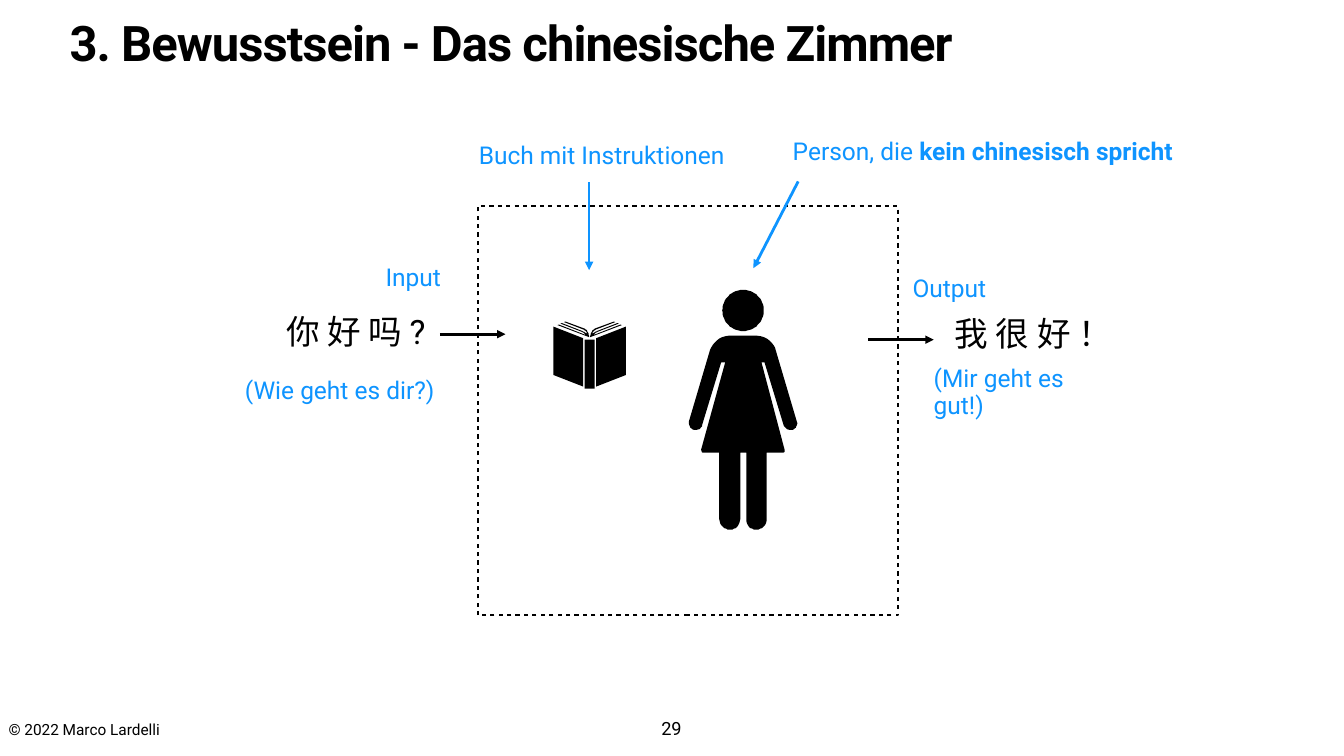
from dataclasses import dataclass
from math import cos, pi, sin

from lxml import etree
from pptx import Presentation
from pptx import util as u
from pptx.dml.color import RGBColor
from pptx.enum import shapes, text
from pptx.oxml import ns

BLACK = RGBColor(0x00, 0x00, 0x00)
BLUE = RGBColor(0x0E, 0x94, 0xFF)
FONT = "Roboto"
INSET = u.Inches(0.06)


@dataclass
class Box:
    """A region in EMU; areas in it are given in percent of its size."""
    left: int
    top: int
    width: int
    height: int

    def point(self, x, y):
        return (u.Emu(int(self.left + self.width * x / 100)),
                u.Emu(int(self.top + self.height * y / 100)))

    def area(self, x, y, width, height):
        return Box(*self.point(x, y), u.Emu(int(self.width * width / 100)),
                   u.Emu(int(self.height * height / 100)))

    def bounds(self):
        return self.left, self.top, self.width, self.height


def format_text(shape, runs, size=35, color=BLUE, bold=False, wrap=False,
                align=text.PP_ALIGN.LEFT, anchor=text.MSO_ANCHOR.MIDDLE,
                line_spacing=0.9, tracking=None,
                auto_size=text.MSO_AUTO_SIZE.SHAPE_TO_FIT_TEXT):
    """Fill a shape with one paragraph; runs is a string or (string, bold) pairs."""
    frame = shape.text_frame
    frame.margin_left = frame.margin_right = INSET
    frame.margin_top = frame.margin_bottom = INSET
    frame.word_wrap, frame.auto_size = wrap, auto_size
    frame.vertical_anchor = anchor
    paragraph = frame.paragraphs[0]
    paragraph.alignment, paragraph.line_spacing = align, line_spacing
    paragraph.space_before = u.Pt(0)
    for words, heavy in [(runs, bold)] if isinstance(runs, str) else runs:
        run = paragraph.add_run()
        run.text = words
        run.font.name, run.font.size = FONT, u.Pt(size)
        run.font.bold, run.font.color.rgb = heavy, color
        if tracking is not None:
            run.font._element.set("spc", str(tracking))


def add_label(slide, box, runs, **style):
    format_text(slide.shapes.add_textbox(*box.bounds()), runs, **style)


def add_arrow(slide, start, end, color):
    arrow = slide.shapes.add_connector(shapes.MSO_CONNECTOR.STRAIGHT, *start, *end)
    arrow.line.width, arrow.line.color.rgb = u.Pt(4), color
    etree.SubElement(arrow.line._get_or_add_ln(), ns.qn("a:tailEnd"), type="triangle")
    etree.SubElement(arrow._element.spPr, ns.qn("a:effectLst"))


def flatten(steps, pieces=8):
    """Turn line (x, y) and cubic (x1, y1, x2, y2, x3, y3) steps into points."""
    points = [steps[0]]
    for step in steps[1:]:
        if len(step) == 2:
            points.append(step)
            continue
        controls = [points[-1], step[:2], step[2:4], step[4:]]
        for i in range(1, pieces + 1):
            t = i / pieces
            weights = ((1 - t) ** 3, 3 * t * (1 - t) ** 2, 3 * t * t * (1 - t), t ** 3)
            points.append(tuple(sum(w * c[axis] for w, c in zip(weights, controls))
                                for axis in (0, 1)))
    return points


def mirror(points):
    return [(-x, y) for x, y in reversed(points)]


def add_icon(slide, box, columns, rows, contours):
    """Draw contours whose x runs from the icon's middle and y from its top."""
    scale = (box.width / columns, box.height / rows)
    placed = [[(x + columns / 2, y) for x, y in contour] for contour in contours]
    builder = slide.shapes.build_freeform(*placed[0][0], scale=scale)
    for index, contour in enumerate(placed):
        if index:
            builder.move_to(*contour[0])
        builder.add_line_segments(contour[1:], close=True)
    icon = builder.convert_to_shape(box.left, box.top)
    icon.shadow.inherit = False
    icon.fill.solid()
    icon.fill.fore_color.rgb = BLACK
    icon.line.fill.background()


def add_book(slide, box):
    cover = [(13, 33), (72, 10), (72, 106), (13, 129)]
    spine = [(-9.5, 36), (9.5, 36), (9.5, 133), (-9.5, 133)]
    pages = flatten([
        (48, 0), (10.5, 14), (7, 16, 5, 18, 3, 22), (2, 25, 1, 29, 1, 30), (1, 31),
        (64, 7), (61, 6), (7, 27), (9, 25, 11, 23, 14, 21), (58, 4), (55, 3),
        (14, 19), (10, 21, 7, 23, 4, 25), (6, 22, 8, 18, 12, 16), (51, 1)])
    add_icon(slide, box, 144, 133,
             [pages, mirror(pages), cover, mirror(cover), spine])


def add_person(slide, box):
    head = [(41 * cos(i * pi / 32), 41 + 41 * sin(i * pi / 32)) for i in range(64)]
    half = flatten([
        (0, 91), (27, 91), (49, 91, 61, 109, 65, 119),                     # shoulder
        (107, 261), (109, 268, 105, 276, 98, 278), (94, 278),              # arm
        (88, 278, 83, 275, 81, 269), (43, 144), (36, 144),
        (83, 318), (83, 321, 82, 323, 79, 323), (47, 323),                 # dress
        (47, 455), (47, 467, 37, 476, 26, 476), (15, 476, 6, 467, 6, 455),  # leg
        (6, 323), (0, 323)])
    add_icon(slide, box, 215, 476, [head, half + mirror(half)])


def add_room(slide, box):
    room = slide.shapes.add_shape(shapes.MSO_SHAPE.RECTANGLE, *box.bounds())
    room.shadow.inherit = False
    room.fill.background()
    room.line.color.rgb, room.line.width = BLACK, u.Pt(3)
    dash = etree.SubElement(room.line._get_or_add_ln(), ns.qn("a:custDash"))
    etree.SubElement(dash, ns.qn("a:ds"), d="200000", sp="200000")
    add_book(slide, box.area(17.99, 28.2, 17.27, 16.38))
    add_person(slide, box.area(50.24, 20.44, 25.78, 58.62))


def add_callout(slide, box, runs, start, end):
    add_label(slide, box, runs)
    add_arrow(slide, start, end, BLUE)


def add_exchange(slide, box, heading, phrase, translation, start, end):
    """A message through the wall; each text comes with its place in the box."""
    add_label(slide, box.area(*heading[1]), heading[0])
    add_label(slide, box.area(*phrase[1]), phrase[0], size=48, color=BLACK)
    add_label(slide, box.area(*translation[1]), translation[0],
              wrap=translation[2])
    add_arrow(slide, box.point(*start), box.point(*end), BLACK)


def add_title(slide, box, words):
    title = slide.shapes.title
    title.left, title.top, title.width, title.height = box.bounds()
    format_text(title, words, size=70, color=BLACK, bold=True, wrap=True,
                anchor=text.MSO_ANCHOR.TOP, line_spacing=0.8, tracking=-140,
                auto_size=text.MSO_AUTO_SIZE.NONE)


def add_footer(slide, page):
    add_label(slide, page.area(0.41, 95, 11.81, 3.2), "© 2022 Marco Lardelli",
              size=22, color=BLACK)
    add_label(slide, page.area(48.97, 94.47, 1.99, 3.67), "29", size=26, color=BLACK,
              align=text.PP_ALIGN.CENTER, anchor=text.MSO_ANCHOR.BOTTOM,
              line_spacing=1.0)


def main():
    presentation = Presentation()
    presentation.slide_width, presentation.slide_height = u.Inches(26.67), u.Inches(15)
    page = Box(0, 0, presentation.slide_width, presentation.slide_height)
    slide = presentation.slides.add_slide(presentation.slide_layouts[5])

    add_title(slide, page.area(4.95, 2.8, 90.1, 10.47),
              "3. Bewusstsein - Das chinesische Zimmer")
    add_footer(slide, page)
    add_room(slide, page.area(35.55, 27.27, 31.27, 54.13))

    # What is in the room
    add_callout(slide, page.area(35.4, 18.53, 18.82, 4.47), "Buch mit Instruktionen",
                page.point(43.83, 24.13), page.point(43.83, 35.73))
    add_callout(slide, page.area(58.76, 17.87, 30.18, 4.6),
                [("Person, die ", False), ("kein chinesisch spricht", True)],
                page.point(59.39, 24), page.point(56.06, 35.47))

    # What goes in and comes out
    add_exchange(slide, page.area(18, 34.6, 19.61, 19.47),
                 ("Input", (53.35, 0, 23.52, 22.95)),
                 ("你 好 吗 ?", (15.68, 31.16, 58.32, 35.62)),
                 ("(Wie geht es dir?)", (0, 77.05, 74.57, 22.95), False),
                 (75.14, 49.32), (100, 49.32))
    add_exchange(slide, page.area(64.6, 36.13, 18.79, 18.07),
                 ("Output", (16.37, 0, 32.53, 24.72)),
                 ("我 很 好 ！", (33.13, 26.57, 66.87, 38.38)),
                 ("(Mir geht es gut!)", (24.75, 75.28, 70, 24.72), True),
                 (0, 48.71), (25.95, 48.71))

    presentation.save("out.pptx")


if __name__ == "__main__":
    main()
